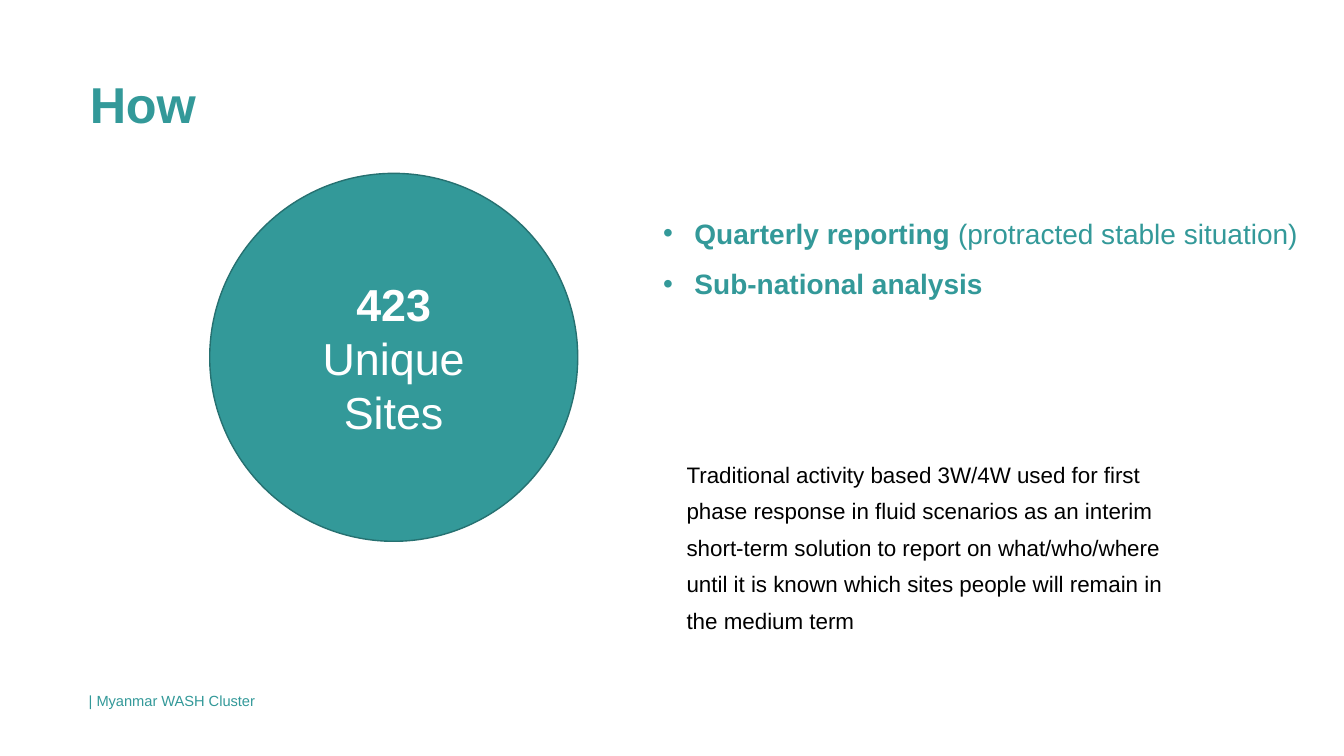
from lxml.etree import SubElement
from pptx import Presentation
from pptx.dml.color import RGBColor
from pptx.enum.shapes import MSO_SHAPE
from pptx.enum.text import MSO_ANCHOR, MSO_AUTO_SIZE, PP_ALIGN
from pptx.oxml.ns import qn
from pptx.util import Inches, Pt

TEAL, DARK_TEAL, WHITE, BLACK = "339999", "267171", "FFFFFF", "000000"

# Each paragraph is a list of (text, bold) runs.
TITLE = [[("How", True)]]
SITES = [[("423", True)], [("Unique Sites", False)]]
REPORTING = [
    [("Quarterly reporting ", True), ("(protracted stable situation)", False)],
    [("Sub-national analysis", True)],
]
NOTE = [[(
    "Traditional activity based 3W/4W used for first phase response in fluid "
    "scenarios as an interim short-term solution to report on what/who/where "
    "until it is known which sites people will remain in the medium term",
    False,
)]]
FOOTER = [[("| Myanmar WASH Cluster", False)]]

TITLE_BOX = (0.89, 0.73, 3.18, 0.61)
CIRCLE_BOX = (2.08, 1.72, 3.65, 3.65)
REPORTING_BOX = (6.48, 1.93, 7.24, 1.05)
NOTE_BOX = (6.81, 4.48, 4.76, 1.78)
FOOTER_BOX = (0.78, 6.75, 12.06, 0.59)
BULLET_INDENT = 0.31


def rgb(value):
    return RGBColor.from_string(value)


def inches(box):
    return [Inches(v) for v in box]


def add_bullet(p):
    pPr = p._p.get_or_add_pPr()
    pPr.set("marL", str(Inches(BULLET_INDENT)))
    pPr.set("indent", str(-Inches(BULLET_INDENT)))
    SubElement(pPr, qn("a:buFont")).set("typeface", "Arial")
    SubElement(pPr, qn("a:buChar")).set("char", "•")


def write(tf, paragraphs, size, color, align=PP_ALIGN.LEFT, spacing=None, bullets=False):
    for i, runs in enumerate(paragraphs):
        p = tf.add_paragraph() if i else tf.paragraphs[0]
        p.alignment = align
        if spacing:
            p.line_spacing = spacing
        if bullets:
            add_bullet(p)
        for text, bold in runs:
            r = p.add_run()
            r.text = text
            r.font.name = "Arial"
            r.font.size = Pt(size)
            r.font.bold = bold
            r.font.color.rgb = rgb(color)


def set_up_frame(tf, margin=None):
    tf.word_wrap = True
    tf.auto_size = MSO_AUTO_SIZE.SHAPE_TO_FIT_TEXT
    tf.vertical_anchor = MSO_ANCHOR.TOP
    if margin is not None:
        tf.margin_left = tf.margin_right = tf.margin_top = tf.margin_bottom = margin


def add_footer(s):
    table = s.shapes.add_table(1, 2, *inches(FOOTER_BOX)).table
    table.first_row = table.horz_banding = False
    for cell in table.iter_cells():
        cell.fill.background()
    write(table.cell(0, 0).text_frame, FOOTER, 10.5, TEAL, spacing=1.5)


def add_title(s):
    title = s.shapes.title
    title.left, title.top, title.width, title.height = inches(TITLE_BOX)
    set_up_frame(title.text_frame, 0)
    write(title.text_frame, TITLE, 36, TEAL)
    title.text_frame.paragraphs[0].runs[0].font._element.set("spc", "-10")


def add_circle(s):
    circle = s.shapes.add_shape(MSO_SHAPE.OVAL, *inches(CIRCLE_BOX))
    circle.shadow.inherit = False
    circle.fill.solid()
    circle.fill.fore_color.rgb = rgb(TEAL)
    circle.line.color.rgb = rgb(DARK_TEAL)
    circle.line.width = Pt(1)
    circle.text_frame.word_wrap = True
    circle.text_frame.vertical_anchor = MSO_ANCHOR.MIDDLE
    write(circle.text_frame, SITES, 32, WHITE, PP_ALIGN.CENTER)


def add_text(s, box, paragraphs, size, color, margin=None, **layout):
    tf = s.shapes.add_textbox(*inches(box)).text_frame
    set_up_frame(tf, margin)
    write(tf, paragraphs, size, color, **layout)


def main():
    prs = Presentation()
    prs.slide_width, prs.slide_height = Inches(13.33), Inches(7.5)
    s = prs.slides.add_slide(prs.slide_layouts[5])
    add_footer(s)
    add_title(s)
    add_text(s, NOTE_BOX, NOTE, 16, BLACK, margin=0, spacing=Pt(26))
    add_circle(s)
    add_text(s, REPORTING_BOX, REPORTING, 20, TEAL, spacing=1.5, bullets=True)
    prs.save("out.pptx")


if __name__ == "__main__":
    main()
